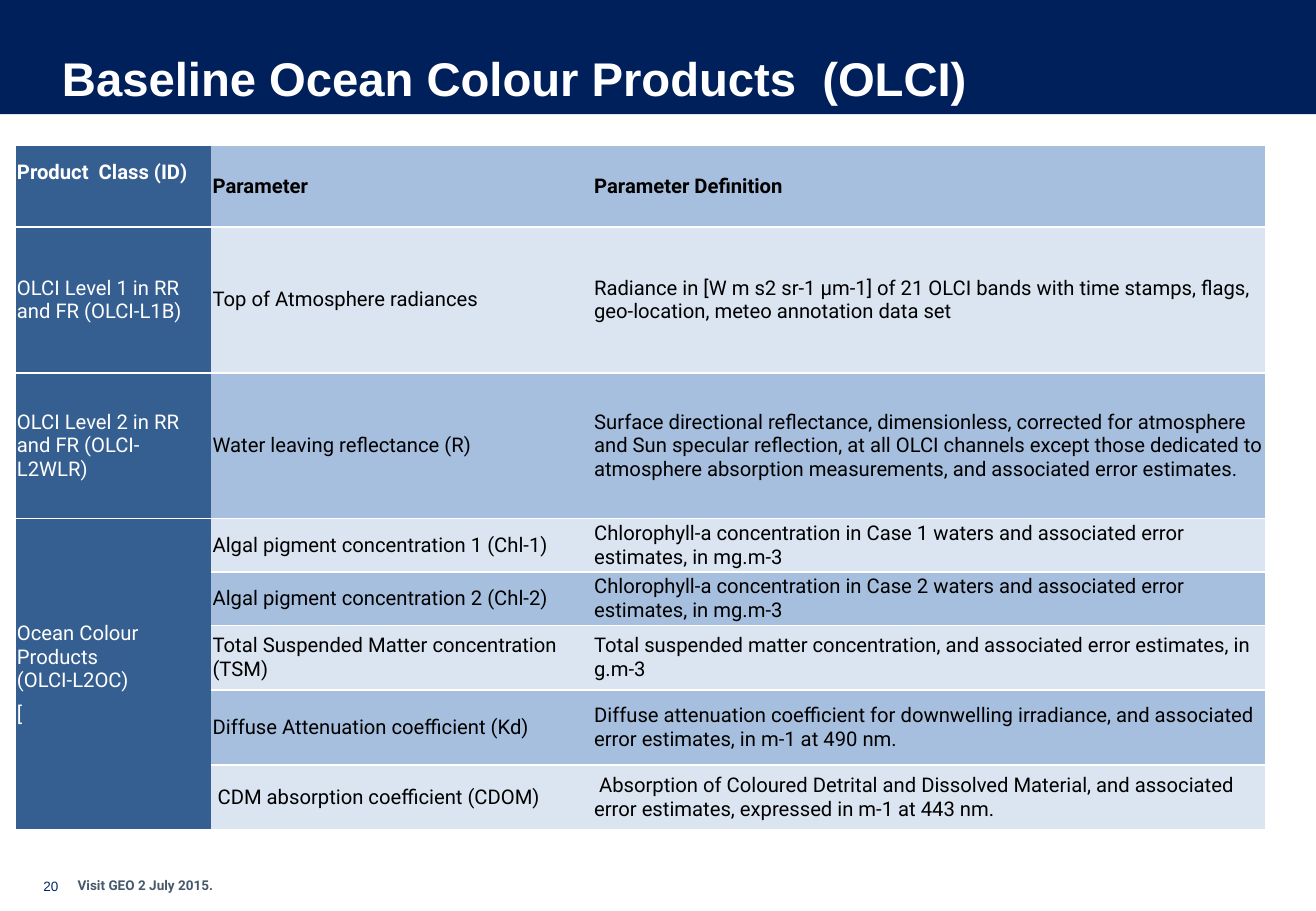
from dataclasses import dataclass

from lxml import etree
from pptx import Presentation
from pptx.dml.color import RGBColor
from pptx.enum import shapes, text
from pptx.oxml import ns
from pptx.util import Inches, Pt


@dataclass(frozen=True)
class Theme:
    """Colours, fonts and type sizes of the slide."""
    navy: str = "00205B"
    number: str = "002569"
    slate: str = "47586A"
    white: str = "FFFFFF"
    black: str = "000000"
    first_column: str = "365F91"
    dark_band: str = "A7BFDE"
    light_band: str = "DBE5F1"
    heading_font: str = "Arial"
    body_font: str = "Roboto"
    title_size: int = 28
    table_size: int = 12
    footer_size: int = 8


THEME = Theme()

COLUMN_WIDTHS = [1.61, 3.14, 5.53]
ROW_HEIGHTS = [0.67, 1.2, 1.2, 0.44, 0.44, 0.53, 0.62, 0.53]
PRODUCTS = [
    ("Product  Class (ID)", "Parameter", "Parameter Definition"),
    ("OLCI Level 1 in RR and FR (OLCI-L1B)", "Top of Atmosphere radiances",
     "Radiance in [W m s2 sr-1 µm-1] of 21 OLCI bands with time stamps, flags, "
     "geo-location, meteo annotation data set"),
    ("OLCI Level 2 in RR and FR (OLCI-L2WLR)", "Water leaving reflectance (R)",
     "Surface directional reflectance, dimensionless, corrected for atmosphere and Sun "
     "specular reflection, at all OLCI channels except those dedicated to atmosphere "
     "absorption measurements, and associated error estimates."),
    ("Ocean Colour Products \v(OLCI-L2OC)\n[", "Algal pigment concentration 1 (Chl-1)",
     "Chlorophyll-a concentration in Case 1 waters and associated error estimates, in mg.m-3"),
    ("", "Algal pigment concentration 2 (Chl-2)",
     "Chlorophyll-a concentration in Case 2 waters and associated error estimates, in mg.m-3"),
    ("", "Total Suspended Matter concentration (TSM)",
     "Total suspended matter concentration, and associated error estimates, in g.m-3"),
    ("", "Diffuse Attenuation coefficient (Kd)",
     "Diffuse attenuation coefficient for downwelling irradiance, and associated error "
     "estimates, in m-1 at 490 nm."),
    ("", " CDM absorption coefficient (CDOM)",
     " Absorption of Coloured Detrital and Dissolved Material, and associated error "
     "estimates, expressed in m-1 at 443 nm."),
]
MERGED_FROM = 3


def write_text(frame, content, *, size, color, font, bold=False, align=text.PP_ALIGN.LEFT, gap=0):
    """Fill a text frame with one formatted paragraph per line."""
    for index, line in enumerate(content.split("\n")):
        para = frame.add_paragraph() if index else frame.paragraphs[0]
        para.text = line
        para.alignment = align
        para.space_before = Pt(gap if index else 0)
        para.space_after = Pt(gap)
        for line_break in para._p.findall(ns.qn("a:br")):
            etree.SubElement(line_break, ns.qn("a:rPr"), sz=str(size * 100))
        for span in para.runs:
            span.font.size = Pt(size)
            span.font.name = font
            span.font.bold = bold
            span.font.color.rgb = RGBColor.from_string(color)


def add_title(page, content):
    """Place the title over a navy band."""
    band = page.shapes.add_shape(shapes.MSO_SHAPE.RECTANGLE, 0, 0, Inches(10.83), Inches(0.94))
    band.shadow.inherit = False
    band.fill.solid()
    band.fill.fore_color.rgb = RGBColor.from_string(THEME.navy)
    band.line.fill.background()
    title = page.shapes.title
    title.element.addprevious(band.element)
    title.left, title.top = Inches(0.21), Inches(0.18)
    title.width, title.height = Inches(10.01), Inches(0.92)
    frame = title.text_frame
    frame.auto_size = text.MSO_AUTO_SIZE.NONE
    frame.vertical_anchor = text.MSO_ANCHOR.MIDDLE
    frame.margin_left = Inches(0.3)
    write_text(frame, content, size=THEME.title_size, color=THEME.white,
               font=THEME.heading_font, bold=True)


def add_label(page, content, left, top, width, height, *, wrap=True, inset=None, **style):
    """Add a footer text box."""
    box = page.shapes.add_textbox(Inches(left), Inches(top), Inches(width), Inches(height))
    frame = box.text_frame
    frame.word_wrap = wrap
    if inset is not None:
        frame.margin_left = frame.margin_right = Inches(inset)
        frame.margin_top = frame.margin_bottom = Inches(inset)
    write_text(frame, content, size=THEME.footer_size, **style)


def set_borders(cell):
    """Draw white rules above and below a cell and none at its sides."""
    properties = cell._tc.get_or_add_tcPr()
    for index, side in enumerate(("lnL", "lnR", "lnT", "lnB")):
        line = etree.Element(ns.qn(f"a:{side}"), w=str(Pt(1)))
        if side in ("lnL", "lnR"):
            etree.SubElement(line, ns.qn("a:noFill"))
        else:
            fill = etree.SubElement(line, ns.qn("a:solidFill"))
            etree.SubElement(fill, ns.qn("a:srgbClr"), val=THEME.white)
        properties.insert(index, line)


def format_cell(cell, content, row, column):
    """Write, colour and border one table cell."""
    if column == 0:
        fill, color = THEME.first_column, THEME.white
    else:
        fill, color = (THEME.light_band if row % 2 else THEME.dark_band), THEME.black
    cell.fill.solid()
    cell.fill.fore_color.rgb = RGBColor.from_string(fill)
    cell.vertical_anchor = text.MSO_ANCHOR.MIDDLE
    cell.margin_left = cell.margin_right = Inches(0.01)
    cell.margin_top = 0
    cell.margin_bottom = Inches(0.23 if row == column == 0 else 0)
    set_borders(cell)
    write_text(cell.text_frame, content, size=THEME.table_size, color=color,
               font=THEME.body_font, bold=row == 0, gap=3)


def add_product_table(page):
    """Add the product table with its merged last class."""
    table = page.shapes.add_table(len(PRODUCTS), len(COLUMN_WIDTHS), Inches(0.13), Inches(1.2),
                                  Inches(sum(COLUMN_WIDTHS)), Inches(sum(ROW_HEIGHTS))).table
    for column, width in zip(table.columns, COLUMN_WIDTHS):
        column.width = Inches(width)
    for row, height in zip(table.rows, ROW_HEIGHTS):
        row.height = Inches(height)
    for row, contents in enumerate(PRODUCTS):
        for column, content in enumerate(contents):
            format_cell(table.cell(row, column), content, row, column)
    table.cell(MERGED_FROM, 0).merge(table.cell(len(PRODUCTS) - 1, 0))


def main():
    """Build and save the slide."""
    deck = Presentation()
    deck.slide_width, deck.slide_height = Inches(10.83), Inches(7.5)
    page = deck.slides.add_slide(deck.slide_layouts[5])
    add_title(page, "Baseline Ocean Colour Products  (OLCI)")
    add_product_table(page)
    add_label(page, "20", 0.35, 7.23, 0.14, 0.13, wrap=False, inset=0, color=THEME.number,
              font=THEME.heading_font, align=text.PP_ALIGN.CENTER)
    add_label(page, "Visit GEO 2 July 2015.", 0.54, 7.17, 4.92, 0.24, color=THEME.slate,
              font=THEME.body_font, bold=True)
    deck.save("out.pptx")


if __name__ == "__main__":
    main()
